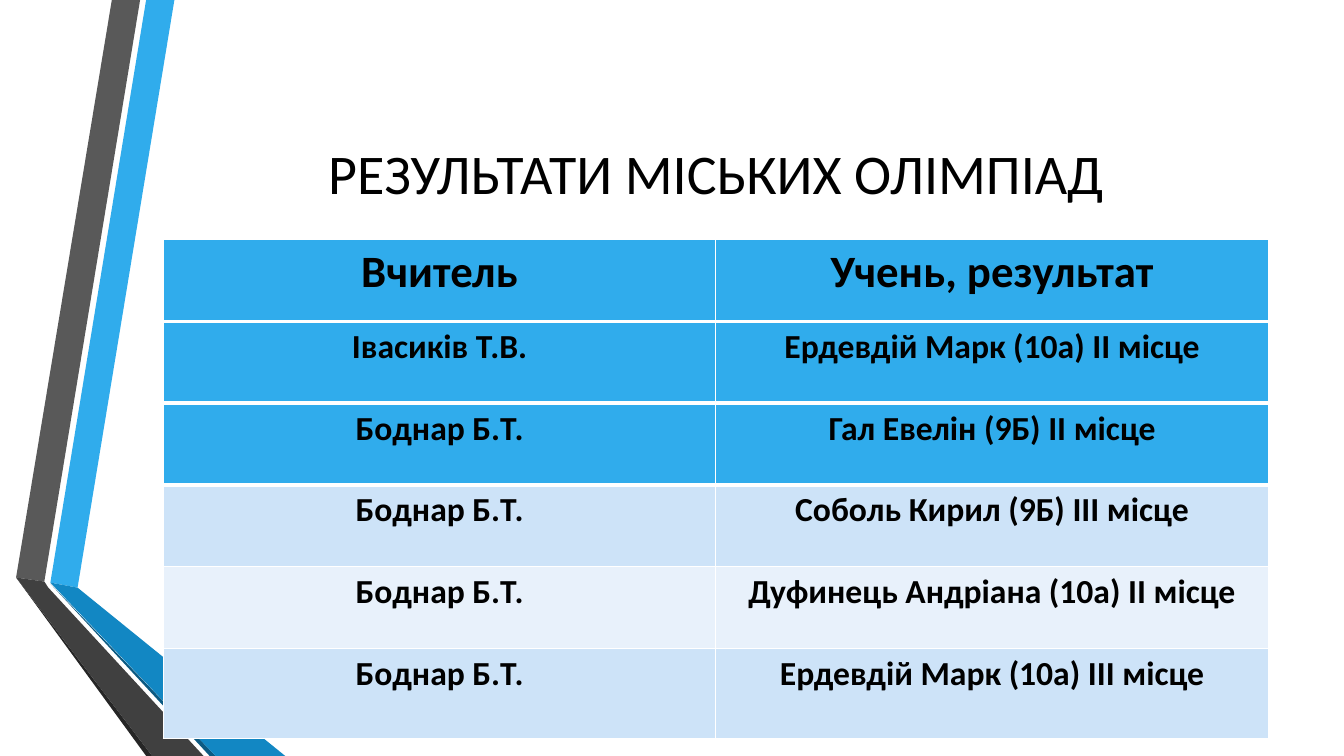
from lxml import etree
from pptx import Presentation
from pptx.dml.color import RGBColor
from pptx.enum import text
from pptx.oxml import ns
from pptx.util import Inches, Pt

BLACK = RGBColor(0, 0, 0)
WHITE = RGBColor(255, 255, 255)
SKY = RGBColor(0x30, 0xAC, 0xEC)
BLUE = RGBColor(0x12, 0x87, 0xC3)
NAVY = RGBColor(0x0C, 0x5A, 0x82)
GRAY = RGBColor(0x59, 0x59, 0x59)
DARK = RGBColor(0x40, 0x40, 0x40)
COAL = RGBColor(0x26, 0x26, 0x26)
PALE = RGBColor(0xCD, 0xE3, 0xF8)
MIST = RGBColor(0xE8, 0xF1, 0xFB)

LEFT, WIDTH, ROW = 1.62, 10.96, 0.81

RIBBONS = [
    (SKY, [(0.5, 5.78), (0.77, 5.83), (1.73, 0), (1.45, 0)]),
    (GRAY, [(1.39, 0), (1.11, 0), (0.16, 5.73), (0.44, 5.77)]),
    (COAL, [(0.16, 5.73), (1.45, 7.5), (1.51, 7.5)]),
    (NAVY, [(0.5, 5.79), (2.08, 7.5), (2.14, 7.5)]),
    (BLUE, [(0.5, 5.78), (2.14, 7.5), (2.83, 7.5), (0.77, 5.83)]),
    (DARK, [(2.02, 7.5), (0.48, 5.83), (0.44, 5.77), (0.16, 5.73), (1.51, 7.5)]),
]

RESULTS = [
    ("Боднар Б.Т.", "Гал Евелін (9Б) ІІ місце"),
    ("Боднар Б.Т.", "Соболь Кирил (9Б) ІІІ місце"),
    ("Боднар Б.Т.", "Дуфинець Андріана (10а) ІІ місце"),
    ("Боднар Б.Т.", "Ердевдій Марк (10а) ІІІ місце"),
]


class Deck:
    font = "Calibri"

    def __init__(self):
        self.file = Presentation()
        self.file.slide_width = Inches(13.33)
        self.file.slide_height = Inches(7.5)
        self.slide = self.file.slides.add_slide(self.file.slide_layouts[6])

    def style(self, frame, size, bold=False):
        line = frame.paragraphs[0]
        line.alignment = text.PP_ALIGN.CENTER
        font = line.runs[0].font
        font.name, font.size, font.bold = self.font, Pt(size), bold
        font.color.rgb = BLACK

    def ribbon(self, color, points):
        dots = [(Inches(x), Inches(y)) for x, y in points]
        pen = self.slide.shapes.build_freeform(*dots[0])
        pen.add_line_segments(dots[1:], close=True)
        shape = pen.convert_to_shape()
        shape.shadow.inherit = False
        shape.fill.solid()
        shape.fill.fore_color.rgb = color
        shape.line.fill.background()

    def title(self, words, top, height):
        box = self.slide.shapes.add_textbox(
            Inches(LEFT), Inches(top), Inches(WIDTH), Inches(height))
        frame = box.text_frame
        frame.word_wrap = True
        frame.vertical_anchor = text.MSO_ANCHOR.MIDDLE
        frame.text = words
        self.style(frame, 40)

    def border(self, cell, thick):
        props = cell._tc.get_or_add_tcPr()
        for spot, (side, width) in enumerate(zip("LRTB", (1, 1, 1, thick))):
            edge = etree.Element(ns.qn(f"a:ln{side}"), w=str(Pt(width)))
            fill = etree.SubElement(edge, ns.qn("a:solidFill"))
            etree.SubElement(fill, ns.qn("a:srgbClr"), val=str(WHITE))
            props.insert(spot, edge)

    def table(self, rows, top, heights, fills, size):
        grid = self.slide.shapes.add_table(
            len(rows), 2, Inches(LEFT), Inches(top),
            Inches(WIDTH), Inches(sum(heights))).table
        for r, row in enumerate(rows):
            grid.rows[r].height = Inches(heights[r])
            for c, words in enumerate(row):
                cell = grid.cell(r, c)
                cell.text_frame.text = words
                self.style(cell.text_frame, size, True)
                cell.fill.solid()
                cell.fill.fore_color.rgb = fills[r]
                self.border(cell, 3 if fills[r] == SKY else 1)


def main():
    deck = Deck()
    for color, points in RIBBONS:
        deck.ribbon(color, points)
    deck.title("РЕЗУЛЬТАТИ МІСЬКИХ ОЛІМПІАД", 0.75, 1.92)
    deck.table(RESULTS, 4, [ROW] * 3 + [0.9], [SKY, PALE, MIST, PALE], 24)
    deck.table([("Івасиків Т.В.", "Ердевдій Марк (10а) ІІ місце")],
               4 - ROW, [ROW], [SKY], 24)
    deck.table([("Вчитель", "Учень, результат")],
               4 - 2 * ROW, [ROW], [SKY], 32)
    deck.file.save("out.pptx")


if __name__ == "__main__":
    main()
